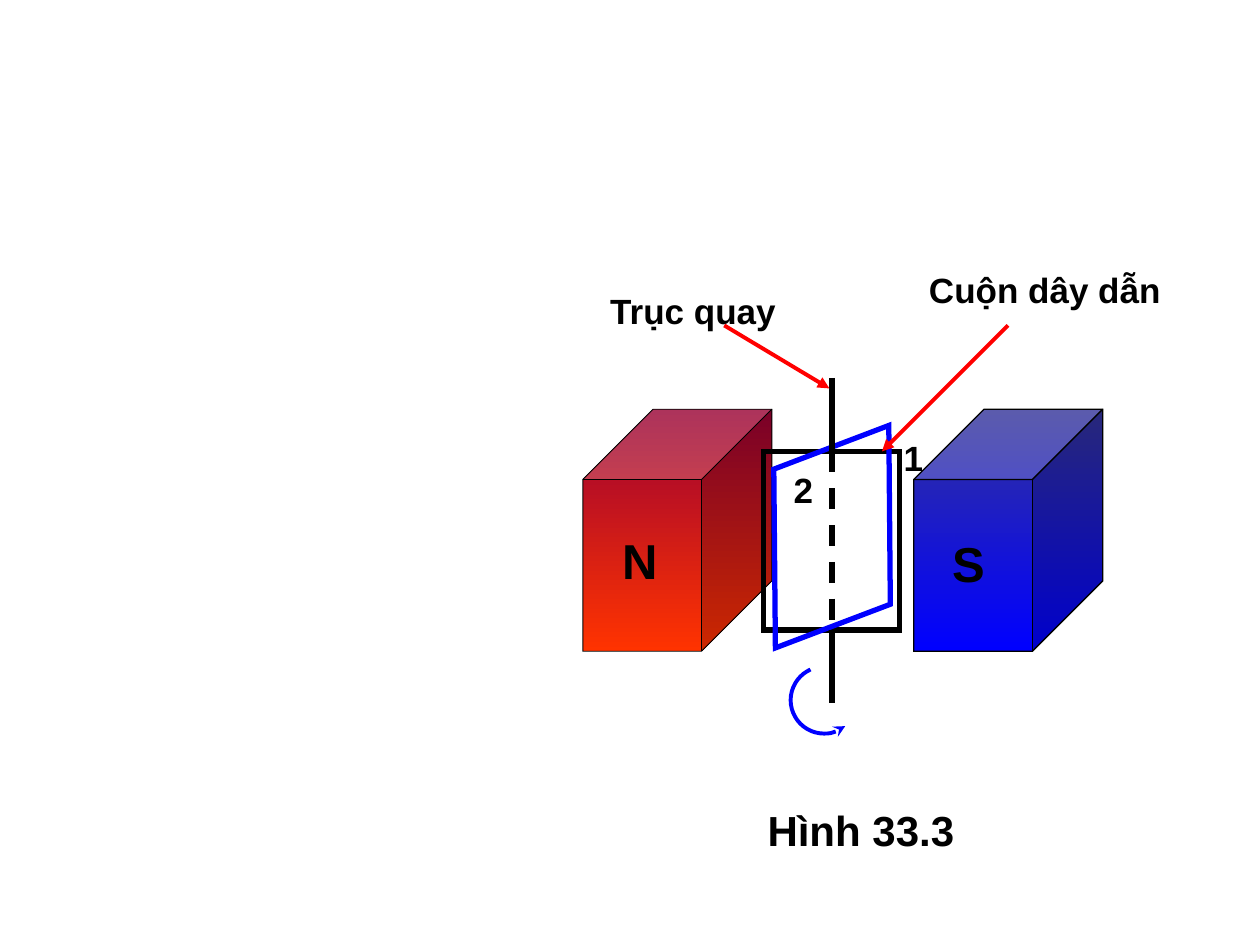
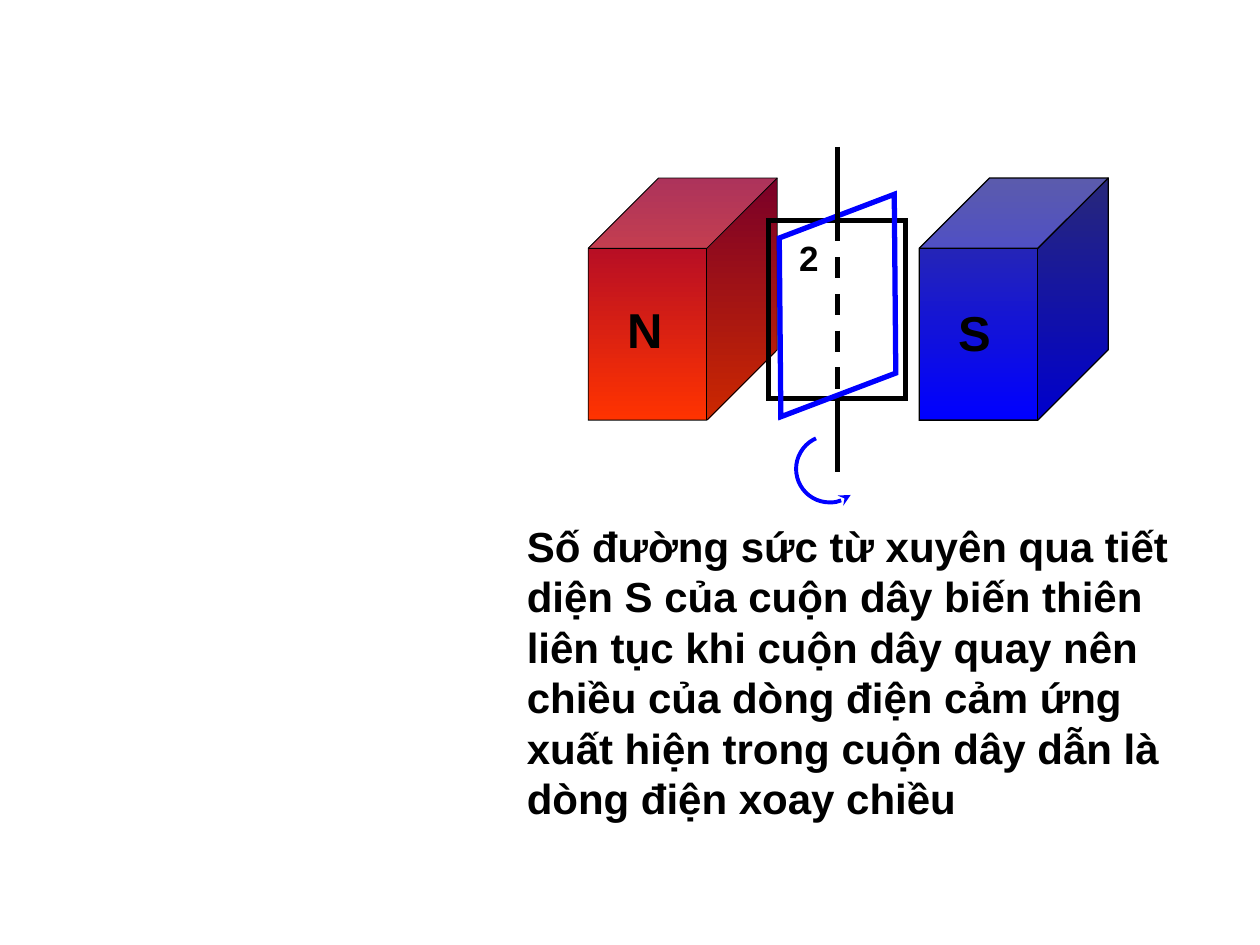
from dataclasses import dataclass
from typing import Optional

from lxml import etree
from pptx import Presentation
from pptx.dml.color import RGBColor
from pptx.enum import dml, shapes, text
from pptx.oxml import ns
from pptx.util import Cm, Pt

MSO = shapes.MSO_SHAPE


@dataclass(frozen=True)
class Theme:
    font: str = "Arial"
    ink: str = "000000"
    coil: str = "0000FF"
    pointer: str = "FF0000"
    label: int = 20
    caption: int = 24
    pole: int = 28
    heavy: float = 3
    medium: float = 2.25


@dataclass(frozen=True)
class Box:
    """Position and size in centimetres."""
    x: float
    y: float
    w: float
    h: float

    def emu(self) -> tuple:
        return Cm(self.x), Cm(self.y), Cm(self.w), Cm(self.h)


@dataclass(frozen=True)
class Magnet:
    name: str
    cube: Box
    name_box: Box
    top: str
    bottom: str
    edge: float


@dataclass(frozen=True)
class Line:
    x1: float
    y1: float
    x2: float
    y2: float
    dashed: bool = False


@dataclass(frozen=True)
class Label:
    text: str
    box: Box
    size: int
    align: text.PP_ALIGN = text.PP_ALIGN.CENTER


T = Theme()
CENTRE_X = 16.77  # rotation axis
COIL = Box(15.39, 9.1, 2.75, 3.6)
COIL_BOTTOM = COIL.y + COIL.h
AXIS_END = 1.48  # part of the axis outside the coil

MAGNETS = [
    Magnet("N", Box(11.75, 8.25, 3.81, 4.88), Box(11.53, 10.58, 2.75, 1.45),
           "990033", "FF3300", 0.5),
    Magnet("S", Box(18.42, 8.25, 3.81, 4.88), Box(18.16, 10.64, 2.75, 1.45),
           "333399", "0000FF", 0.75),
]
AXIS = [
    Line(CENTRE_X, COIL.y, CENTRE_X, COIL_BOTTOM, dashed=True),
    Line(CENTRE_X, COIL_BOTTOM, CENTRE_X, COIL_BOTTOM + AXIS_END),
    Line(CENTRE_X, COIL.y - AXIS_END, CENTRE_X, COIL.y),
]
POINTERS = [Line(14.6, 6.56, 16.72, 7.83), Line(20.32, 6.56, 17.78, 9.1)]
POSITION_2 = Label("2", Box(15.35, 9.31, 1.69, 1.1), T.label)
FIGURE_LABELS = [
    Label("Trục quay", Box(11.22, 5.72, 5.5, 1.1), T.label),
    Label("Cuộn dây dẫn", Box(18.42, 5.29, 5.29, 1.1), T.label),
    Label("Hình 33.3", Box(14.18, 16.09, 6.35, 1.27), T.caption),
    Label("1", Box(17.78, 8.68, 1.27, 1.1), T.label),
]
EXPLANATION = Label(
    "Số đường sức từ xuyên qua tiết diện S của cuộn dây biến thiên liên tục "
    "khi cuộn dây quay nên chiều của dòng điện cảm ứng xuất hiện trong cuộn "
    "dây dẫn là dòng điện xoay chiều",
    Box(10.37, 10.37, 13.76, 6.35), T.caption, text.PP_ALIGN.LEFT)


def stroke(sp, colour: str, width: float, dashed: bool = False,
           end: Optional[str] = None, arrow: str = "triangle") -> None:
    """Set a mitred outline; end is headEnd or tailEnd for an arrowhead."""
    sp.line.color.rgb = RGBColor.from_string(colour)
    sp.line.width = Pt(width)
    if dashed:
        sp.line.dash_style = dml.MSO_LINE.DASH
    ln = sp.element.spPr.find(ns.qn("a:ln"))
    etree.SubElement(ln, ns.qn("a:miter"), lim="800000")
    if end:
        etree.SubElement(ln, ns.qn(f"a:{end}"), type=arrow)


def add_outline(parent, kind: MSO, box: Box):
    sp = parent.shapes.add_shape(kind, *box.emu())
    sp.shadow.inherit = False
    sp.fill.background()
    return sp


def add_line(parent, line: Line, colour: str, width: float,
             end: Optional[str] = None) -> None:
    sp = parent.shapes.add_connector(
        shapes.MSO_CONNECTOR.STRAIGHT,
        Cm(line.x1), Cm(line.y1), Cm(line.x2), Cm(line.y2))
    stroke(sp, colour, width, line.dashed, end)
    etree.SubElement(sp.element.spPr, ns.qn("a:effectLst"))


def add_label(parent, label: Label) -> None:
    tf = parent.shapes.add_textbox(*label.box.emu()).text_frame
    tf.word_wrap = True
    tf.auto_size = text.MSO_AUTO_SIZE.SHAPE_TO_FIT_TEXT
    tf.text = label.text
    p = tf.paragraphs[0]
    p.alignment = label.align
    font = p.runs[0].font
    font.name, font.size, font.bold = T.font, Pt(label.size), True
    font.color.rgb = RGBColor.from_string(T.ink)


def add_magnet(parent, magnet: Magnet) -> None:
    sp = add_outline(parent, MSO.CUBE, magnet.cube)
    sp.adjustments[0] = 0.372
    sp.fill.gradient()
    sp.fill.gradient_angle = 270
    for stop, colour in zip(sp.fill.gradient_stops, (magnet.top, magnet.bottom)):
        stop.color.rgb = RGBColor.from_string(colour)
    stroke(sp, T.ink, magnet.edge)
    add_label(parent, Label(magnet.name, magnet.name_box, T.pole))


def add_generator(slide, dx: float = 0, dy: float = 0) -> None:
    """Draw the magnets, coil and axis as one group, shifted by dx and dy."""
    group = slide.shapes.add_group_shape()
    north, south = MAGNETS
    add_magnet(group, north)

    # Coil in its two positions
    stroke(add_outline(group, MSO.RECTANGLE, COIL), T.ink, T.heavy)
    turned = add_outline(group, MSO.PARALLELOGRAM, Box(14.91, 9.13, 3.73, 3.38))
    turned.adjustments[0] = 0.37
    turned.rotation = 339.2
    stroke(turned, T.coil, T.heavy)

    for line in AXIS:
        add_line(group, line, T.ink, T.heavy)
    add_magnet(group, south)

    # Direction of rotation; arc angles are in 60000ths of a degree
    turn = add_outline(group, MSO.ARC, Box(15.94, 13.44, 1.35, 1.35))
    for i, degrees in enumerate((51, 246)):
        turn.adjustments[i] = degrees * 60000 / 100000
    stroke(turn, T.coil, T.medium, end="headEnd", arrow="stealth")

    add_label(group, POSITION_2)
    group.left += Cm(dx)
    group.top += Cm(dy)


def main() -> None:
    prs = Presentation()
    prs.slide_width, prs.slide_height = Cm(25.4), Cm(19.05)
    blank = prs.slide_layouts[6]

    # Labelled figure
    figure = prs.slides.add_slide(blank)
    add_generator(figure)
    for label in FIGURE_LABELS:
        add_label(figure, label)
    for pointer in POINTERS:
        add_line(figure, pointer, T.pointer, T.medium, "tailEnd")

    # Explanation under the figure
    answer = prs.slides.add_slide(blank)
    add_generator(answer, dx=0.11, dy=-4.66)
    add_label(answer, EXPLANATION)

    prs.save("out.pptx")


if __name__ == "__main__":
    main()
